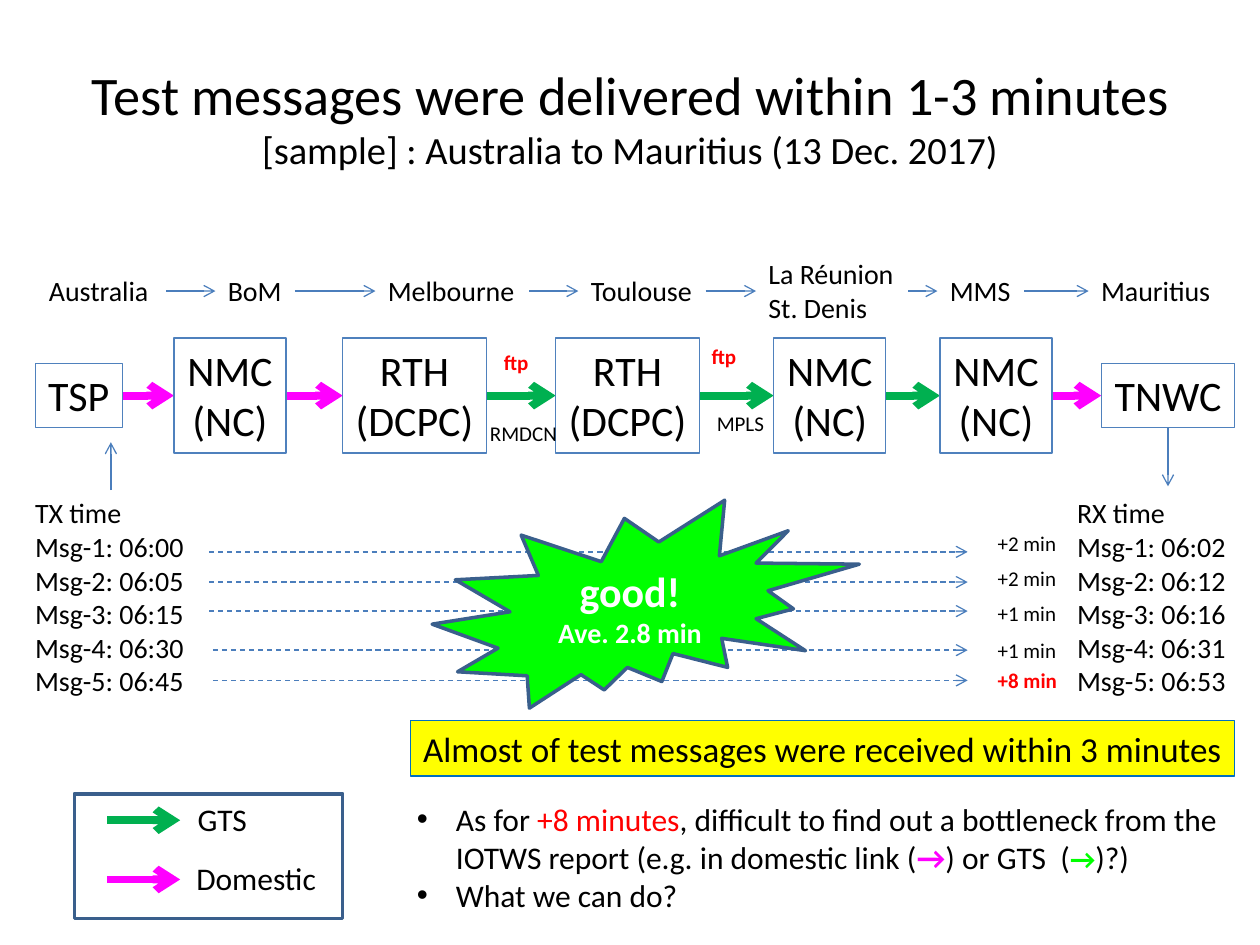
"""Build the slide on test message delivery times from Australia to Mauritius."""
import lxml.etree
import pptx
import pptx.dml.color
import pptx.enum.dml
import pptx.enum.shapes
import pptx.enum.text
import pptx.oxml.ns
import pptx.util

Inches = pptx.util.Inches
Pt = pptx.util.Pt
qn = pptx.oxml.ns.qn
Align = pptx.enum.text.PP_ALIGN
Shape = pptx.enum.shapes.MSO_SHAPE

THEME = {
    "font": "Calibri",
    "colours": {
        name: pptx.dml.color.RGBColor.from_string(code)
        for name, code in {
            "text": "000000", "white": "FFFFFF", "alert": "FF0000", "good": "00FF00",
            "highlight": "FFFF00", "gts": "00B050", "domestic": "FF00FF", "thin": "4B7EBC",
            "box": "4F81BD", "banner": "0070C0", "frame": "3A5F8C",
        }.items()
    },
    "sizes": {"title": 31, "subtitle": 22, "station": 24, "banner": 20,
              "body": 18, "place": 16, "note": 12},
}
COLOURS = THEME["colours"]


def add_span(para, text, size, colour="text", bold=False):
    span = para.add_run()
    span.text = text
    style = {"name": THEME["font"], "size": Pt(THEME["sizes"][size]), "bold": bold}
    for name, value in style.items():
        setattr(span.font, name, value)
    span.font.color.rgb = COLOURS[colour]


def add_box(left, middle, width, lines, size, colour="text", bold=False,
            outline=None, fill=None, align=Align.LEFT):
    height = 0.1 + len(lines) * THEME["sizes"][size] * 1.22 / 72
    box = page.shapes.add_textbox(
        Inches(left), Inches(middle - height / 2), Inches(width), Inches(height))
    if outline:
        box.line.color.rgb = COLOURS[outline]
        box.line.width = Pt(0.75)
    if fill:
        box.fill.solid()
        box.fill.fore_color.rgb = COLOURS[fill]
    frame = box.text_frame
    frame.word_wrap = False
    frame.auto_size = pptx.enum.text.MSO_AUTO_SIZE.SHAPE_TO_FIT_TEXT
    for index, line in enumerate(lines):
        para = frame.add_paragraph() if index else frame.paragraphs[0]
        para.alignment = align
        add_span(para, line, size, colour, bold)


deck = pptx.Presentation()
deck.slide_width, deck.slide_height = Inches(10), Inches(7.5)
page = deck.slides.add_slide(deck.slide_layouts[5])

title = page.shapes.title
placing = {"left": 0.5, "top": 0.3, "width": 9, "height": 1.25}
for name, value in placing.items():
    setattr(title, name, Inches(value))
title.text_frame.auto_size = pptx.enum.text.MSO_AUTO_SIZE.NONE
title.text_frame.vertical_anchor = pptx.enum.text.MSO_ANCHOR.MIDDLE
heading = title.text_frame.paragraphs[0]
heading.alignment = Align.CENTER
add_span(heading, "Test messages were delivered within 1-3 minutes", "title")
heading.add_line_break()
add_span(heading, "[sample] : Australia to Mauritius (13 Dec. 2017)", "subtitle")

stations = [
    (0.28, 0.69, ["TSP"]),
    (1.38, 0.89, ["NMC", "(NC)"]),
    (2.72, 1.14, ["RTH", "(DCPC)"]),
    (4.41, 1.14, ["RTH", "(DCPC)"]),
    (6.14, 0.89, ["NMC", "(NC)"]),
    (7.46, 0.89, ["NMC", "(NC)"]),
    (8.74, 1.06, ["TNWC"]),
]
places = [
    (0.29, 1.03, ["Australia"]),
    (1.71, 0.63, ["BoM"]),
    (2.98, 1.22, ["Melbourne"]),
    (4.59, 1.01, ["Toulouse"]),
    (6, 1.21, ["La Réunion", "St. Denis"]),
    (7.44, 0.69, ["MMS"]),
    (8.64, 1.08, ["Mauritius"]),
]
links = ["domestic", "domestic", "gts", "gts", "gts", "domestic"]
messages = [
    ("06:00", "06:02", "+2 min", 1.66, 4.38, 4.31),
    ("06:05", "06:12", "+2 min", 1.66, 4.62, 4.59),
    ("06:15", "06:16", "+1 min", 1.66, 4.85, 4.87),
    ("06:30", "06:31", "+1 min", 1.69, 5.16, 5.16),
    ("06:45", "06:53", "+8 min", 1.69, 5.4, 5.4),
]
legend = [("GTS", "gts", 1.47, 0.6, 6.51), ("Domestic", "domestic", 1.46, 1.16, 6.98)]

frame_box = page.shapes.add_shape(
    Shape.RECTANGLE, Inches(0.59), Inches(6.3), Inches(2.13), Inches(0.99))
frame_box.shadow.inherit = False
frame_box.fill.background()
frame_box.line.color.rgb = COLOURS["frame"]
frame_box.line.width = Pt(2)

arrows = [(0.88, 3.89, 0.88, 3.51, "thin", 0.75, False),
          (9.27, 3.39, 9.27, 3.86, "thin", 0.75, False)]
for (left, width, lines), following, link in zip(stations, stations[1:], links):
    arrows.append((left + width, 3.14, following[0], 3.14, link, 4.5, False))
for (left, width, lines), following in zip(places, places[1:]):
    arrows.append((left + width, 2.31, following[0], 2.31, "thin", 0.75, False))
for sent, received, delay, start, level, note_level in messages:
    arrows.append((start, level, 7.68, level, "thin", 0.75, True))
for label, link, left, width, level in legend:
    arrows.append((0.85, level, 1.43, level, link, 4.5, False))

for x1, y1, x2, y2, colour, weight, dashed in arrows:
    arrow = page.shapes.add_connector(
        pptx.enum.shapes.MSO_CONNECTOR.STRAIGHT, Inches(x1), Inches(y1), Inches(x2), Inches(y2))
    arrow.line.color.rgb = COLOURS[colour]
    arrow.line.width = Pt(weight)
    if dashed:
        arrow.line.dash_style = pptx.enum.dml.MSO_LINE.DASH
    properties = arrow.element.spPr
    lxml.etree.SubElement(properties.find(qn("a:ln")), qn("a:tailEnd"), type="arrow")
    lxml.etree.SubElement(properties, qn("a:effectLst"))

for left, width, lines in stations:
    add_box(left, 3.14, width, lines, "station", outline="box", align=Align.CENTER)
for left, width, lines in places:
    add_box(left, 2.31, width, lines, "place")
for label, link, left, width, level in legend:
    add_box(left, level - 0.01, width, [label], "body")

for left, heading_text, column in [(0.18, "TX time", 0), (8.45, "RX time", 1)]:
    times = [f"Msg-{number}: {message[column]}" for number, message in enumerate(messages, 1)]
    add_box(left, 4.75, 1.39, [heading_text, *times], "place")
for sent, received, delay, start, level, note_level in messages:
    late = delay == "+8 min"
    add_box(7.82, note_level, 0.67, [delay], "note", "alert" if late else "text", late)
for left, middle, width, label, colour in [
    (3.9, 2.88, 0.4, "ftp", "alert"),
    (5.55, 2.83, 0.4, "ftp", "alert"),
    (3.79, 3.44, 0.74, "RMDCN", "text"),
    (5.59, 3.36, 0.58, "MPLS", "text"),
]:
    add_box(left, middle, width, [label], "note", colour, colour == "alert")
add_box(3.26, 5.94, 6.54, ["Almost of test messages were received within 3 minutes"],
        "banner", outline="banner", fill="highlight")

burst = page.shapes.add_shape(
    Shape.EXPLOSION2, Inches(3.43), Inches(3.97), Inches(3.39), Inches(1.65))
burst.shadow.inherit = False
burst.fill.solid()
burst.fill.fore_color.rgb = COLOURS["good"]
burst.line.color.rgb = COLOURS["frame"]
burst.line.width = Pt(2)
burst.text_frame.vertical_anchor = pptx.enum.text.MSO_ANCHOR.MIDDLE
verdict = burst.text_frame.paragraphs[0]
average = burst.text_frame.add_paragraph()
for para, text, size in [(verdict, "good!", "station"), (average, "Ave. 2.8 min", "place")]:
    para.alignment = Align.CENTER
    add_span(para, text, size, "white", True)

remarks = [
    [("As for ", "body"), ("+8 minutes", "body", "alert"),
     (", difficult to find out a bottleneck from the IOTWS report (e.g. in domestic link (",
      "body"),
     ("→", "body", "domestic", True), (") or GTS  (", "body"),
     ("→", "place", "good", True), (")?)", "body")],
    [("What we can do?", "body")],
]
remark_box = page.shapes.add_textbox(Inches(3.21), Inches(6.3), Inches(6.59), Inches(1.01))
remark_box.text_frame.word_wrap = True
for index, spans in enumerate(remarks):
    frame = remark_box.text_frame
    para = frame.add_paragraph() if index else frame.paragraphs[0]
    layout = para._p.get_or_add_pPr()
    for name, value in {"marL": 0.31, "indent": -0.31}.items():
        layout.set(name, str(Inches(value)))
    lxml.etree.SubElement(layout, qn("a:buFont"), typeface="Arial")
    lxml.etree.SubElement(layout, qn("a:buChar"), char="•")
    for span in spans:
        add_span(para, *span)

deck.save("out.pptx")
